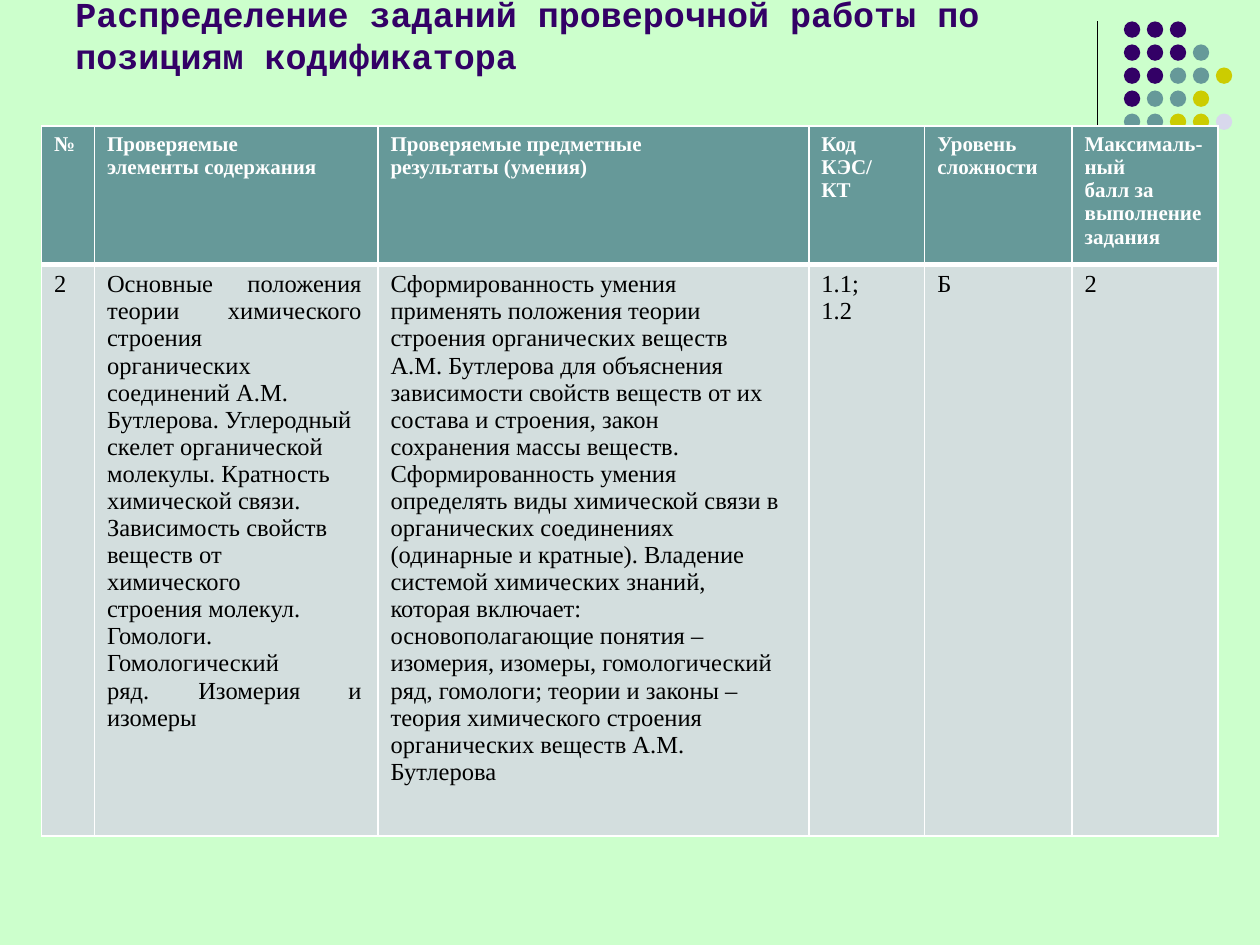
import pptx
import pptx.dml.color
import pptx.enum.shapes
import pptx.enum.text
import pptx.oxml
import pptx.oxml.ns
import pptx.util
from pptx.util import Inches

PALE_GREEN = pptx.dml.color.RGBColor(0xCC, 0xFF, 0xCC)
PURPLE = pptx.dml.color.RGBColor(0x33, 0x00, 0x66)
TEAL = pptx.dml.color.RGBColor(0x66, 0x99, 0x99)
OLIVE = pptx.dml.color.RGBColor(0xCC, 0xCC, 0x00)
LAVENDER = pptx.dml.color.RGBColor(0xD8, 0xD8, 0xEC)
GREY = pptx.dml.color.RGBColor(0xD3, 0xDE, 0xDE)
WHITE = pptx.dml.color.RGBColor(0xFF, 0xFF, 0xFF)
BLACK = pptx.dml.color.RGBColor(0x00, 0x00, 0x00)

TITLE = "Распределение заданий проверочной работы по позициям кодификатора"

# One letter per dot, a blank where there is none
DOT_ROWS = ["PPP", "PPPT", "PPTTO", "PTTO", "TTOOL", "TOOL", "OOLL", " L L"]
DOT_COLOURS = {"P": PURPLE, "T": TEAL, "O": OLIVE, "L": LAVENDER}
DOT_SIZE = 0.13

COLUMN_WIDTHS = [0.42, 2.25, 3.42, 0.92, 1.17, 1.16]
ROW_HEIGHT = 0.41  # the rows grow with their text
HEADER = [
    "№",
    "Проверяемые\nэлементы содержания",
    "Проверяемые предметные\nрезультаты (умения)",
    "Код\nКЭС/\nКТ",
    "Уровень\nсложности",
    "Максималь-ный\nбалл за\nвыполнение\nзадания",
]
# Tabs spread the words of a line, \v breaks a line inside a paragraph
CONTENT_ELEMENTS = [
    "Основные\tположения",
    "теории\tхимического",
    "строения\vорганических",
    "соединений А.М.\vБутлерова. Углеродный\vскелет органической\v"
    "молекулы. Кратность\vхимической связи.\vЗависимость свойств\v"
    "веществ от\vхимического",
    "строения молекул.\vГомологи.\vГомологический",
    "ряд.\tИзомерия\tи",
    "изомеры",
]
SUBJECT_RESULTS = [
    "Сформированность умения\vприменять положения теории\v"
    "строения органических веществ\vА.М. Бутлерова для объяснения\v"
    "зависимости свойств веществ от их\vсостава и строения, закон\v"
    "сохранения массы веществ.\vСформированность умения",
    "определять виды химической связи в",
    "органических соединениях\v(одинарные и кратные). Владение\v"
    "системой химических знаний,\vкоторая включает:\v"
    "основополагающие понятия –",
    "изомерия, изомеры, гомологический",
    "ряд, гомологи; теории и законы –",
    "теория химического строения\vорганических веществ A.M.\vБутлерова",
]
TASK = ["2", "\n".join(CONTENT_ELEMENTS), "\n".join(SUBJECT_RESULTS), "1.1;\n1.2", "Б", "2"]
# Tab stops (inches, alignment) by the number of tabs in a line
TAB_STOPS = {1: [(2.02, "r")], 2: [(1.13, "ctr"), (2.02, "r")]}


def format_text(text_frame, font_name, size, colour, bold):
    for paragraph in text_frame.paragraphs:
        for run in paragraph.runs:
            run.font.name = font_name
            run.font.size = pptx.util.Pt(size)
            run.font.color.rgb = colour
            run.font.bold = bold


def set_tab_stops(paragraph):
    stops = TAB_STOPS.get(paragraph.text.count("\t"))
    if stops:
        tabs = "".join(f'<a:tab pos="{Inches(position)}" algn="{alignment}"/>'
                       for position, alignment in stops)
        paragraph._p.get_or_add_pPr().append(pptx.oxml.parse_xml(
            f'<a:tabLst {pptx.oxml.ns.nsdecls("a")}>{tabs}</a:tabLst>'))


def add_divider(slide, left, top, height):
    line = slide.shapes.add_connector(
        pptx.enum.shapes.MSO_CONNECTOR.STRAIGHT,
        Inches(left), Inches(top), Inches(left), Inches(top + height))
    line.line.color.rgb = BLACK
    line.line.width = pptx.util.Pt(0.75)
    properties = line._element.spPr
    properties.append(properties.makeelement(pptx.oxml.ns.qn("a:effectLst"), {}))


def add_dots(slide, left, top, width, height):
    group = slide.shapes.add_group_shape()
    column_step = (width - DOT_SIZE) / (max(map(len, DOT_ROWS)) - 1)
    row_step = (height - DOT_SIZE) / (len(DOT_ROWS) - 1)
    for row, letters in enumerate(DOT_ROWS):
        for column, letter in enumerate(letters):
            if letter == " ":
                continue
            dot = group.shapes.add_shape(
                pptx.enum.shapes.MSO_SHAPE.OVAL,
                Inches(left + column * column_step), Inches(top + row * row_step),
                Inches(DOT_SIZE), Inches(DOT_SIZE))
            dot.shadow.inherit = False
            dot.fill.solid()
            dot.fill.fore_color.rgb = DOT_COLOURS[letter]
            dot.line.fill.background()


def add_title(slide, left, top, width, height):
    title = slide.shapes.add_textbox(Inches(left), Inches(top), Inches(width), Inches(height))
    text_frame = title.text_frame
    text_frame.word_wrap = True
    text_frame.vertical_anchor = pptx.enum.text.MSO_ANCHOR.BOTTOM
    text_frame.text = TITLE
    format_text(text_frame, "Courier New", 20, PURPLE, True)


def set_borders(cell, **widths):
    cell_properties = cell._tc.get_or_add_tcPr()
    for side in "LRTB":
        width = pptx.util.Pt(widths.get(side, 1))
        cell_properties.append(pptx.oxml.parse_xml(
            f'<a:ln{side} {pptx.oxml.ns.nsdecls("a")} w="{width}">'
            f'<a:solidFill><a:srgbClr val="{WHITE}"/></a:solidFill></a:ln{side}>'))


def add_task_table(slide, left, top):
    # Texts, fill, size, font colour, bold and the thick border of each row
    styles = [
        (HEADER, TEAL, 12, WHITE, True, {"B": 3}),
        (TASK, GREY, 14, BLACK, False, {"T": 3}),
    ]
    table = slide.shapes.add_table(
        len(styles), len(COLUMN_WIDTHS), Inches(left), Inches(top),
        Inches(sum(COLUMN_WIDTHS)), Inches(ROW_HEIGHT * len(styles))).table
    for column, width in zip(table.columns, COLUMN_WIDTHS):
        column.width = Inches(width)
    for row, style in zip(table.rows, styles):
        row.height = Inches(ROW_HEIGHT)
        texts, fill, size, colour, bold, borders = style
        for cell, text in zip(row.cells, texts):
            cell.text_frame.text = text
            format_text(cell.text_frame, "Times New Roman", size, colour, bold)
            for paragraph in cell.text_frame.paragraphs:
                set_tab_stops(paragraph)
            set_borders(cell, **borders)
            cell.fill.solid()
            cell.fill.fore_color.rgb = fill


def main():
    presentation = pptx.Presentation()
    presentation.slide_width = Inches(10)
    presentation.slide_height = Inches(7.5)
    slide = presentation.slides.add_slide(presentation.slide_layouts[6])
    slide.background.fill.solid()
    slide.background.fill.fore_color.rgb = PALE_GREEN

    # Corner decoration
    add_divider(slide, 8.71, 0.17, 1.66)
    add_dots(slide, 8.92, 0.17, 0.86, 1.41)

    # Heading and table
    add_title(slide, 0.5, 0.13, 8.25, 0.53)
    add_task_table(slide, 0.33, 1)

    presentation.save("out.pptx")


if __name__ == "__main__":
    main()
